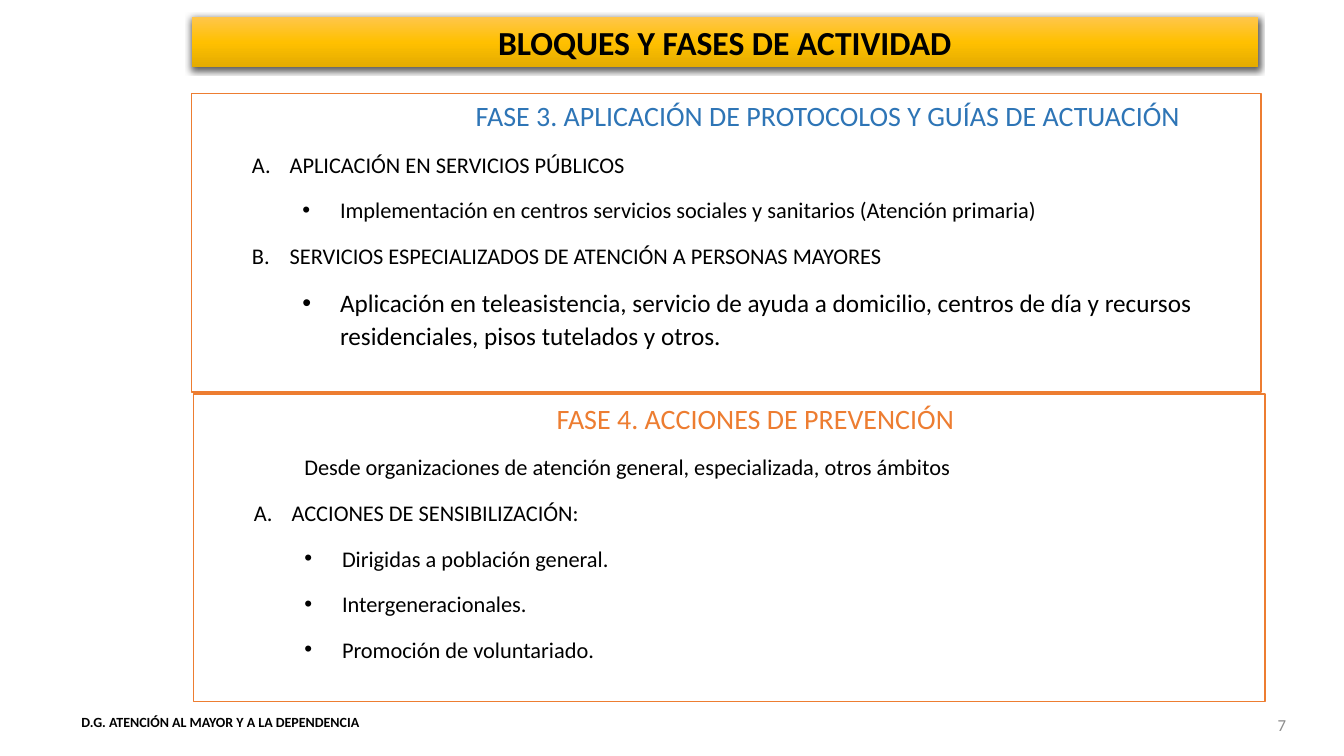
from copy import deepcopy

from lxml.etree import SubElement
from pptx import Presentation
from pptx.dml.color import RGBColor
from pptx.enum.shapes import MSO_SHAPE as Shape
from pptx.enum.text import MSO_ANCHOR as Anchor, PP_ALIGN as Align
from pptx.oxml.ns import qn
from pptx.util import Cm, Pt

THEME = {
    "font": "Calibri",
    "ink": "000000", "blue": "2E75B6", "orange": "ED7D31",
    "grey": "8C8C8C", "paper": "FFFFFF",
    "gold": [(0, "FFC64B"), (0.5, "FFC000"), (1, "E3AB00")],
    "title": 24, "heading": 20, "large": 18, "body": 16, "number": 12, "footer": 10,
}
TITLE = ("BLOQUES Y FASES DE ACTIVIDAD", (4.83, 0.43, 26.87, 1.27))
PHASES = [
    {
        "area": (4.83, 2.36, 26.95, 7.52),
        "heading": ("FASE 3. APLICACIÓN DE PROTOCOLOS Y GUÍAS DE ACTUACIÓN", "blue", 6.91, 1.0),
        "lines": [
            ("letter", "APLICACIÓN EN SERVICIOS PÚBLICOS", "body"),
            ("bullet", "Implementación en centros servicios sociales y sanitarios (Atención primaria)", "body"),
            ("letter", "SERVICIOS ESPECIALIZADOS DE ATENCIÓN A PERSONAS MAYORES", "body"),
            ("bullet", "Aplicación en teleasistencia, servicio de ayuda a domicilio, centros de día "
                       "y recursos residenciales, pisos tutelados y otros.", "large"),
        ],
    },
    {
        "area": (4.88, 9.93, 27, 7.75),
        "heading": ("FASE 4. ACCIONES DE PREVENCIÓN", "orange", 8.9, 1.07),
        "lines": [
            ("plain", "Desde organizaciones de atención general, especializada, otros ámbitos", "body"),
            ("letter", "ACCIONES DE SENSIBILIZACIÓN:", "body"),
            ("bullet", "Dirigidas a población general.", "body"),
            ("bullet", "Intergeneracionales.", "body"),
            ("bullet", "Promoción de voluntariado.", "body"),
        ],
    },
]
FOOTER = ("D.G. ATENCIÓN AL MAYOR Y A LA DEPENDENCIA", (1.8, 17.86, 10.62, 0.81))
NUMBER = ("7", (25.4, 17.86, 7.26, 0.81))
INDENTS = {"plain": (2.54, 0), "letter": (2.22, -0.95), "bullet": (3.49, -0.95)}


def color(name):
    return RGBColor.from_string(THEME.get(name, name))


def write(para, text, size, ink="ink", bold=False, **formats):
    for name, value in formats.items():
        setattr(para, name, value)
    span = para.add_run()
    span.text = text
    for name, value in {"name": THEME["font"], "size": Pt(THEME[size]), "bold": bold}.items():
        setattr(span.font, name, value)
    span.font.color.rgb = color(ink)


def indent(para, left, first=0):
    props = para._p.get_or_add_pPr()
    props.set("marL", str(Cm(left)))
    props.set("indent", str(Cm(first)))
    return props


def add_rectangle(slide, area):
    box = slide.shapes.add_shape(Shape.RECTANGLE, *map(Cm, area))
    box.shadow.inherit = False
    box.text_frame.word_wrap = True
    return box


def add_title(slide, text, area):
    box = add_rectangle(slide, area)
    box.line.fill.background()
    box.fill.gradient()
    box.fill.gradient_angle = 270
    stop_list = box._element.spPr.find(qn("a:gradFill")).find(qn("a:gsLst"))
    stop_list.append(deepcopy(stop_list[-1]))
    for stop, (position, shade) in zip(box.fill.gradient_stops, THEME["gold"]):
        stop.position = position
        stop.color.rgb = color(shade)
    effects = box._element.spPr.find(qn("a:effectLst"))
    shadow = SubElement(effects, qn("a:outerShdw"), blurRad=str(Pt(4.5)), dist=str(Pt(1.5)),
                        dir="5400000", algn="ctr", rotWithShape="0")
    shade = SubElement(shadow, qn("a:srgbClr"), val=THEME["ink"])
    SubElement(shade, qn("a:alpha"), val="63000")
    box.text_frame.vertical_anchor = Anchor.MIDDLE
    write(box.text_frame.paragraphs[0], text, "title", bold=True, alignment=Align.CENTER)


def add_phase(slide, phase):
    box = add_rectangle(slide, phase["area"])
    box.fill.solid()
    box.fill.fore_color.rgb = color("paper")
    box.line.color.rgb = color("orange")
    box.line.width = Pt(1)
    frame = box.text_frame
    frame.vertical_anchor = Anchor.TOP
    text, ink, left, spacing = phase["heading"]
    para = frame.paragraphs[0]
    indent(para, left)
    write(para, text, "heading", ink, alignment=Align.LEFT, line_spacing=spacing)
    letters = 0
    for kind, text, size in phase["lines"]:
        para = frame.add_paragraph()
        props = indent(para, *INDENTS[kind])
        if kind == "letter":
            letters += 1
            SubElement(props, qn("a:buFont"), typeface="+mj-lt")
            SubElement(props, qn("a:buAutoNum"), type="alphaUcPeriod", startAt=str(letters))
        elif kind == "bullet":
            SubElement(props, qn("a:buFont"), typeface="Arial")
            SubElement(props, qn("a:buChar"), char="•")
        write(para, text, size, alignment=Align.LEFT, level=1 if kind == "letter" else 2,
              line_spacing=1.07, space_before=Pt(12))


def add_label(slide, text, area, size, anchor, **formats):
    frame = slide.shapes.add_textbox(*map(Cm, area)).text_frame
    frame.word_wrap = True
    frame.vertical_anchor = anchor
    write(frame.paragraphs[0], text, size, **formats)


def main():
    deck = Presentation()
    deck.slide_width, deck.slide_height = Cm(33.87), Cm(19.05)
    slide = deck.slides.add_slide(deck.slide_layouts[6])
    add_label(slide, *FOOTER, "footer", Anchor.TOP, bold=True)
    add_title(slide, *TITLE)
    for phase in PHASES:
        add_phase(slide, phase)
    add_label(slide, *NUMBER, "number", Anchor.MIDDLE, ink="grey", alignment=Align.RIGHT)
    deck.save("out.pptx")


if __name__ == "__main__":
    main()
